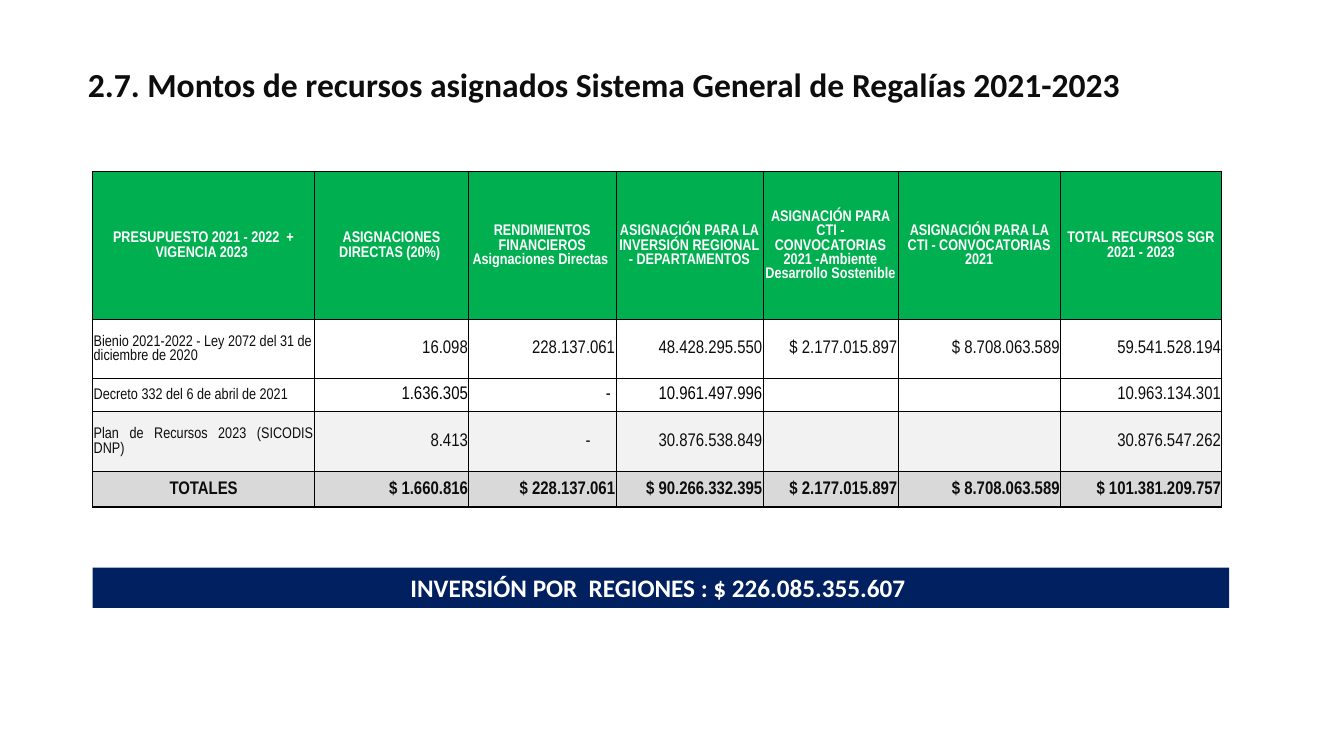
from dataclasses import dataclass

from lxml import etree
from pptx import Presentation
from pptx.dml.color import RGBColor
from pptx.enum.shapes import MSO_SHAPE
from pptx.enum.text import MSO_ANCHOR, MSO_AUTO_SIZE, PP_ALIGN
from pptx.oxml.ns import qn
from pptx.util import Inches, Pt

LEFT, CENTER, RIGHT, JUSTIFY = PP_ALIGN.LEFT, PP_ALIGN.CENTER, PP_ALIGN.RIGHT, PP_ALIGN.JUSTIFY
TOP, MIDDLE = MSO_ANCHOR.TOP, MSO_ANCHOR.MIDDLE
RECTANGLE = MSO_SHAPE.RECTANGLE
NO_AUTOFIT = MSO_AUTO_SIZE.NONE

WHITE = RGBColor(0xFF, 0xFF, 0xFF)
BLACK = RGBColor(0x00, 0x00, 0x00)
INK = RGBColor(0x0D, 0x0D, 0x0D)
NAVY = RGBColor(0x00, 0x20, 0x60)
GREEN = RGBColor(0x00, 0xB0, 0x50)
PALE_GRAY = RGBColor(0xF2, 0xF2, 0xF2)
GRAY = RGBColor(0xD9, 0xD9, 0xD9)

HEADING_FONT = "Calibri"
TABLE_FONT = "Arial Narrow"
SLIDE_WIDTH, SLIDE_HEIGHT = Inches(13.33), Inches(7.5)
THIN, THICK = Pt(0.5), Pt(1)
CELL_MARGIN = Inches(0.01)


@dataclass(frozen=True)
class BudgetRow:
    height: float  # percent of the slide height
    texts: tuple[str, ...]
    fill: RGBColor = WHITE
    color: RGBColor = INK
    amount_color: RGBColor = INK
    label_size: float = 11
    amount_size: float = 13
    label_align: PP_ALIGN = LEFT
    amount_align: PP_ALIGN = RIGHT
    bold: bool = False
    top: int = THIN
    bottom: int = THIN
    right: int = THICK
    dash_margin: int = CELL_MARGIN


COLUMN_WIDTHS = (16.5, 11.48, 10.95, 10.95, 10.05, 12.08, 12)  # percent of the slide width
BUDGET = (
    BudgetRow(19.6, (
        "PRESUPUESTO 2021 - 2022  + VIGENCIA 2023 ",
        "ASIGNACIONES DIRECTAS (20%) ",
        "RENDIMIENTOS FINANCIEROS Asignaciones Directas ",
        "ASIGNACIÓN PARA LA INVERSIÓN REGIONAL - DEPARTAMENTOS",
        "ASIGNACIÓN PARA CTI - CONVOCATORIAS 2021 -Ambiente Desarrollo Sostenible",
        "ASIGNACIÓN PARA LA CTI - CONVOCATORIAS 2021",
        "TOTAL RECURSOS SGR 2021 - 2023",
    ), fill=GREEN, color=WHITE, amount_color=WHITE, amount_size=11,
        label_align=CENTER, amount_align=CENTER, bold=True, top=THICK, bottom=THICK),
    BudgetRow(7.73, (
        "Bienio 2021-2022 - Ley 2072 del 31 de diciembre de 2020",
        "16.098", "228.137.061", "48.428.295.550", "$ 2.177.015.897",
        "$ 8.708.063.589", "59.541.528.194",
    ), top=THICK),
    BudgetRow(4.4, (
        "Decreto 332 del 6 de abril de 2021",
        "1.636.305", "-", "10.961.497.996", "", "", "10.963.134.301",
    ), amount_color=BLACK, dash_margin=Inches(0.05)),
    BudgetRow(8, (
        "Plan de Recursos 2023 (SICODIS DNP)",
        "8.413", "-", "30.876.538.849", "", "", "30.876.547.262",
    ), fill=PALE_GRAY, label_align=JUSTIFY, bottom=THICK, dash_margin=Inches(0.25)),
    BudgetRow(4.67, (
        "TOTALES", "$ 1.660.816", "$ 228.137.061", "$ 90.266.332.395",
        "$ 2.177.015.897", "$ 8.708.063.589", "$ 101.381.209.757",
    ), fill=GRAY, label_size=13, label_align=CENTER, bold=True,
        top=THICK, bottom=THICK, right=THIN),
)


def across(percent: float) -> int:
    return round(SLIDE_WIDTH * percent / 100)


def down(percent: float) -> int:
    return round(SLIDE_HEIGHT * percent / 100)


def write(frame, text: str, *, font: str, size: float, color: RGBColor,
          bold: bool = False, align: PP_ALIGN = LEFT):
    """Put one formatted paragraph in the frame and return it."""
    para = frame.paragraphs[0]
    para.alignment = align
    span = para.add_run()
    span.text = text
    span.font.name = font
    span.font.size = Pt(size)
    span.font.bold = bold
    span.font.color.rgb = color
    return para


def set_borders(cell, **widths: int) -> None:
    """Draw black borders; keywords are the sides L, R, T and B."""
    properties = cell._tc.get_or_add_tcPr()
    for side, width in widths.items():
        line = etree.SubElement(properties, qn(f"a:ln{side}"), w=str(width))
        fill = etree.SubElement(line, qn("a:solidFill"))
        etree.SubElement(fill, qn("a:srgbClr"), val=str(BLACK))


def add_title(page) -> None:
    title = page.shapes.title
    title.left, title.top = across(2.03), down(8.67)
    title.width, title.height = across(84.92), down(5.87)
    title.fill.solid()
    title.fill.fore_color.rgb = WHITE
    frame = title.text_frame
    frame.auto_size = NO_AUTOFIT
    frame.vertical_anchor = TOP
    para = write(frame, "2.7. Montos de recursos asignados Sistema General de Regalías 2021-2023",
                 font=HEADING_FONT, size=24, color=INK, bold=True)
    para.line_spacing = Pt(24)
    para._p.get_or_add_pPr().set("marL", str(Inches(0.5)))


def add_banner(page) -> None:
    banner = page.shapes.add_shape(RECTANGLE, across(6.9), down(75.07), across(84.55), down(5.33))
    banner.shadow.inherit = False
    banner.fill.solid()
    banner.fill.fore_color.rgb = NAVY
    banner.line.fill.background()
    banner.text_frame.word_wrap = True
    banner.text_frame.vertical_anchor = MIDDLE
    write(banner.text_frame, "INVERSIÓN POR  REGIONES : $ 226.085.355.607 ",
          font=HEADING_FONT, size=18, color=WHITE, bold=True, align=CENTER)


def fill_cell(cell, row: BudgetRow, column: int) -> None:
    text = row.texts[column]
    last = len(COLUMN_WIDTHS) - 1
    is_label = column == 0
    set_borders(cell, L=THICK if is_label else THIN, R=row.right if column == last else THIN,
                T=row.top, B=row.bottom)
    cell.fill.solid()
    cell.fill.fore_color.rgb = row.fill
    cell.vertical_anchor = MIDDLE
    cell.margin_left = cell.margin_top = CELL_MARGIN
    cell.margin_right = row.dash_margin if text == "-" else CELL_MARGIN
    cell.margin_bottom = 0
    if text:
        write(cell.text_frame, text, font=TABLE_FONT, bold=row.bold,
              size=row.label_size if is_label else row.amount_size,
              color=row.color if column in (0, last) else row.amount_color,
              align=row.label_align if is_label else row.amount_align)


def add_budget_table(page) -> None:
    frame = page.shapes.add_table(
        len(BUDGET), len(COLUMN_WIDTHS), across(6.9), down(22.67),
        across(sum(COLUMN_WIDTHS)), down(sum(row.height for row in BUDGET)))
    table = frame.table
    table.first_row = table.horz_banding = False
    for column, width in zip(table.columns, COLUMN_WIDTHS):
        column.width = across(width)
    for index, row in enumerate(BUDGET):
        table.rows[index].height = down(row.height)
        for column in range(len(COLUMN_WIDTHS)):
            fill_cell(table.cell(index, column), row, column)


def main() -> None:
    deck = Presentation()
    deck.slide_width, deck.slide_height = SLIDE_WIDTH, SLIDE_HEIGHT
    page = deck.slides.add_slide(deck.slide_layouts.get_by_name("Title Only"))
    add_title(page)
    add_banner(page)
    add_budget_table(page)
    deck.save("out.pptx")


if __name__ == "__main__":
    main()
